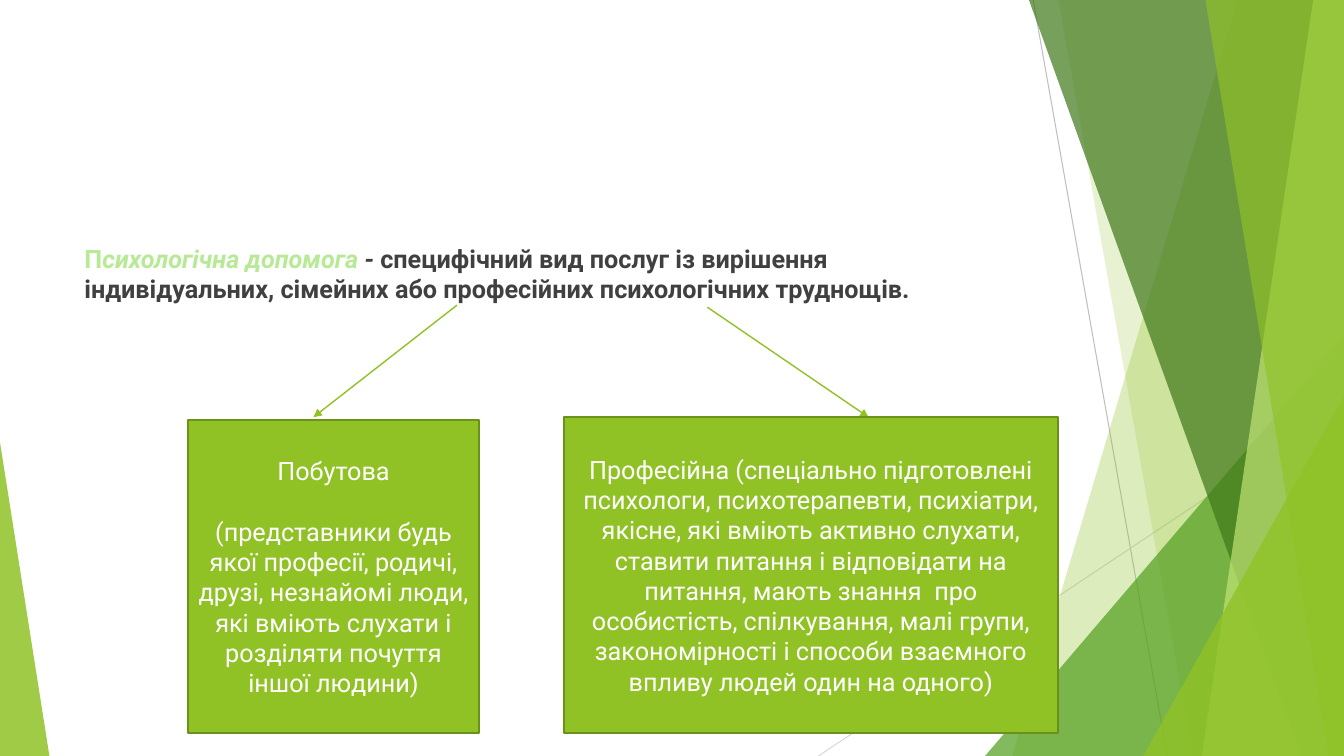
from lxml import etree
from pptx import Presentation
from pptx.dml.color import RGBColor
from pptx.enum.shapes import MSO_CONNECTOR, MSO_SHAPE
from pptx.enum.text import MSO_ANCHOR, PP_ALIGN
from pptx.oxml.ns import qn
from pptx.util import Pt

STRAIGHT = MSO_CONNECTOR.STRAIGHT
TRIANGLE, RECTANGLE = MSO_SHAPE.ISOSCELES_TRIANGLE, MSO_SHAPE.RECTANGLE
CENTER, MIDDLE, TOP = PP_ALIGN.CENTER, MSO_ANCHOR.MIDDLE, MSO_ANCHOR.TOP

FONT, TEXT_SIZE, LINE_GAP = "Roboto", 18, 21.6
WIDTH, HEIGHT = 960, 540
COLORS = {
    "lime": "90C226", "green": "54A021", "forest": "3F7819", "pale": "C0E474",
    "border": "6B901C", "term": "B7E996", "ink": "404040", "white": "FFFFFF",
    "gray": "BFBFBF", "light gray": "D9D9D9",
}

# Definition: text, colour, italic
DEFINITION = [
    ("П", "term", False),
    ("сихологічна допомога ", "term", True),
    ("- ", "ink", True),
    ("специфічний вид послуг із вирішення індивідуальних, сімейних або "
     "професійних психологічних труднощів.", "ink", False),
]
DEFINITION_BOX = (53.3, 170, 676.8, 305.3)

# Kinds of help: box, paragraphs
HELP_KINDS = [
    ((134, 300, 208.5, 223.8), [
        "Побутова",
        "(представники будь якої професії, родичі, друзі, незнайомі люди, "
        "які вміють слухати і розділяти почуття іншої людини)",
    ]),
    ((402.6, 297.8, 353.3, 226), [
        "Професійна (спеціально підготовлені психологи, психотерапевти, психіатри, "
        "якісне, які вміють активно слухати, ставити питання і відповідати на "
        "питання, мають знання  про особистість, спілкування, малі групи, "
        "закономірності і способи взаємного впливу людей один на одного)",
    ]),
]
ARROWS = [(326.4, 218, 223.9, 298), (505.2, 219.4, 620.4, 298)]

# Background: thin lines, then facets from back to front
THIN_LINES = [((738, 0, 833.8, HEIGHT), "gray"),
              ((WIDTH, 290, 584.6, HEIGHT), "light gray")]
# Bands reach the right edge: left end at the top, left end at the bottom, colour, opacity
BACK_BANDS = [(884, 723, "lime", 30), (756, 852, "lime", 20)]
FRONT_BANDS = [(735, 929.5, "forest", 70), (938, 858.5, "pale", 70), (861, 949, "lime", 65)]
# Corners stand on the bottom edge: left, top, width, apex, colour, opacity
GREEN_CORNER = (703.6, 240, 256.4, 1, "green", 72)
LIME_CORNERS = [(816.6, 283, 143.4, 1, "lime", 80), (0, 316, 35.3, 0, "lime", 85)]


def rgb(name):
    return RGBColor.from_string(COLORS[name])


def points(values):
    return [Pt(value) for value in values]


def paint_facet(shape, color, opacity):
    shape.shadow.inherit = False
    shape.fill.solid()
    shape.fill.fore_color.rgb = rgb(color)
    shape.line.fill.background()
    tint = shape.fill._xPr.find(qn("a:solidFill"))[0]
    etree.SubElement(tint, qn("a:alpha"), val=str(opacity * 1000))


def add_band(top_left, bottom_left, color, opacity):
    outline = slide.shapes.build_freeform(Pt(top_left), 0, scale=1.0)
    corners = [(WIDTH, 0), (WIDTH, HEIGHT), (bottom_left, HEIGHT)]
    outline.add_line_segments([points(corner) for corner in corners], close=True)
    paint_facet(outline.convert_to_shape(), color, opacity)


def add_corner(left, top, width, apex, color, opacity):
    corner = slide.shapes.add_shape(TRIANGLE, *points((left, top, width, HEIGHT - top)))
    corner.adjustments[0] = apex
    paint_facet(corner, color, opacity)


def add_line(ends, color, weight, arrow=False):
    line = slide.shapes.add_connector(STRAIGHT, *points(ends))
    line.line.color.rgb = rgb(color)
    line.line.width = Pt(weight)
    if arrow:
        etree.SubElement(line.line._get_or_add_ln(), qn("a:tailEnd"), type="triangle")
    etree.SubElement(line._element.spPr, qn("a:effectLst"))


def add_run(paragraph, text, color, bold=False, italic=False):
    run = paragraph.add_run()
    run.text = text
    font = run.font
    font.name, font.size, font.bold, font.italic = FONT, Pt(TEXT_SIZE), bold, italic
    font.color.rgb = rgb(color)


prs = Presentation()
prs.slide_width, prs.slide_height = Pt(WIDTH), Pt(HEIGHT)
slide = prs.slides.add_slide(prs.slide_layouts[6])

# Background
for ends, color in THIN_LINES:
    add_line(ends, color, 0.75)
for band in BACK_BANDS:
    add_band(*band)
add_corner(*GREEN_CORNER)
for band in FRONT_BANDS:
    add_band(*band)
for corner in LIME_CORNERS:
    add_corner(*corner)

# Definition
definition = slide.shapes.add_textbox(*points(DEFINITION_BOX)).text_frame
definition.word_wrap = True
definition.vertical_anchor = TOP
for text, color, italic in DEFINITION:
    add_run(definition.paragraphs[0], text, color, bold=True, italic=italic)

# Arrows to the kinds of help
for ends in ARROWS:
    add_line(ends, "lime", 1, arrow=True)

# Kinds of help
for box, paragraphs in HELP_KINDS:
    kind = slide.shapes.add_shape(RECTANGLE, *points(box))
    kind.shadow.inherit = False
    kind.fill.solid()
    kind.fill.fore_color.rgb = rgb("lime")
    kind.line.color.rgb = rgb("border")
    kind.line.width = Pt(1.5)
    frame = kind.text_frame
    frame.word_wrap = True
    frame.vertical_anchor = MIDDLE
    for index, text in enumerate(paragraphs):
        paragraph = frame.add_paragraph() if index else frame.paragraphs[0]
        paragraph.alignment = CENTER
        if index:
            paragraph.space_before = Pt(LINE_GAP)
        add_run(paragraph, text, "white")

prs.save("out.pptx")
